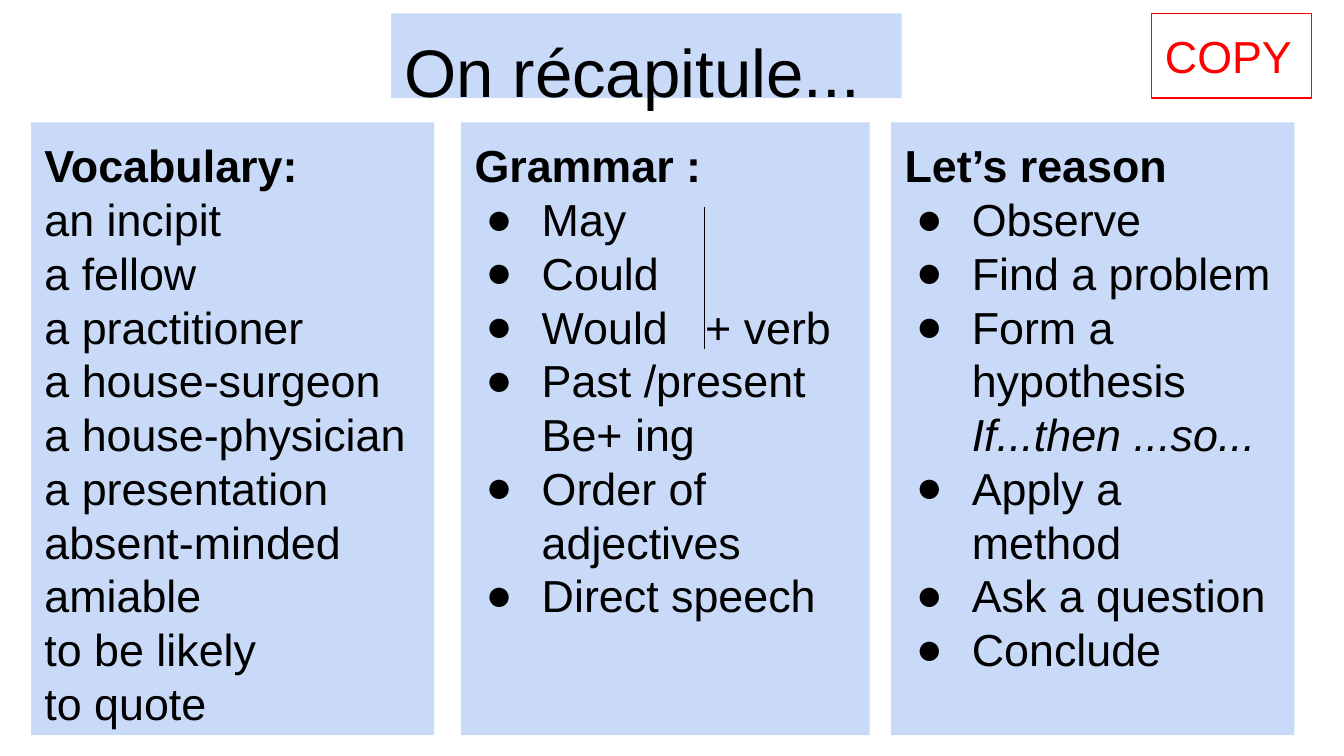
from lxml.etree import SubElement
from pptx import Presentation
from pptx.dml.color import RGBColor
from pptx.enum.shapes import MSO_CONNECTOR, MSO_SHAPE
from pptx.enum.text import MSO_ANCHOR, MSO_AUTO_SIZE, PP_ALIGN
from pptx.oxml.ns import qn
from pptx.util import Pt

# Content: a list item is a tuple (style, *runs)
TITLE = "On récapitule..."
STAMP = "COPY"
VOCABULARY = ["an incipit", "a fellow", "a practitioner", "a house-surgeon",
              "a house-physician", "a presentation", "absent-minded",
              "amiable", "to be likely", "to quote"]
GRAMMAR = [("May",), ("Could",), ("Would", " ", "+ verb"),
           ("Past /present Be+ ing",), ("Order of adjectives",),
           ("Direct speech",)]
REASONING = [("bullet", "Observe"), ("bullet", "Find a problem"),
             ("bullet", "Form a hypothesis"), ("example", "If...then ...so..."),
             ("bullet", "Apply a method"), ("bullet", "Ask a question"),
             ("bullet", "Conclude")]
COLUMNS = [
    ("Vocabulary:", [("plain", word) for word in VOCABULARY]),
    ("Grammar :", [("bullet", *runs) for runs in GRAMMAR]),
    ("Let’s reason", REASONING),
]

# Layout in points
SLIDE = (720, 405)
HEADER_TOP, HEADER_HEIGHT = 7.2, 45.4
COLUMN_LEFT, COLUMN_STEP = 16.6, 230.4
COLUMN_TOP, COLUMN_HEIGHT = 65.5, 328.3
COLUMN_WIDTHS = (216, 218.9, 216)
INSET, INDENT, HANGING = 7.2, 36, -30
TITLE_SIZE, BODY_SIZE = 36, 24
WIDE_GAP = 13.33

PALE_BLUE, BLACK, RED = "C9DAF8", "000000", "FF0000"


def paint(color_format, hex_color):
    color_format.rgb = RGBColor.from_string(hex_color)


def set_box(box, left, top, width, height, size):
    """Place a box and prepare its text frame for top-left text."""
    box.left, box.top, box.width, box.height = map(Pt, (left, top, width, height))
    frame = box.text_frame
    frame.word_wrap = True
    frame.auto_size = MSO_AUTO_SIZE.NONE
    frame.vertical_anchor = MSO_ANCHOR.TOP
    frame.margin_left = frame.margin_right = frame.margin_bottom = Pt(INSET)
    frame.margin_top = Pt(INSET + size * 0.05)
    return frame


def fill_box(box):
    box.fill.solid()
    paint(box.fill.fore_color, PALE_BLUE)


def write(paragraph, runs, size, color=BLACK, style="plain", bold=False):
    paragraph.alignment = PP_ALIGN.LEFT
    paragraph.line_spacing = Pt(size * 1.2)
    paragraph.space_before = paragraph.space_after = Pt(0)
    properties = paragraph._p.get_or_add_pPr()
    properties.set("marL", str(Pt(0 if style == "plain" else INDENT)))
    properties.set("indent", str(Pt(HANGING if style == "bullet" else 0)))
    if style == "bullet":
        bullet_color = SubElement(properties, qn("a:buClr"))
        SubElement(bullet_color, qn("a:srgbClr")).set("val", BLACK)
        SubElement(properties, qn("a:buChar")).set("char", "●")
    else:
        SubElement(properties, qn("a:buNone"))
    for text in runs:
        run = paragraph.add_run()
        run.text = text
        font = run.font
        font.name, font.size = "Arial", Pt(size)
        font.bold, font.italic = bold, style == "example"
        paint(font.color, color)
        if text == " ":  # widen the gap by letter spacing
            run._r.get_or_add_rPr().set("spc", str(round(WIDE_GAP * 100)))


deck = Presentation()
deck.slide_width, deck.slide_height = map(Pt, SLIDE)
slide = deck.slides.add_slide(deck.slide_layouts.get_by_name("Comparison"))
title = slide.shapes.title
*bodies, spare = [holder for holder in slide.placeholders
                  if 1 <= holder.placeholder_format.idx <= 4]
spare._element.getparent().remove(spare._element)

# Three columns
for index, (body, width, (heading, items)) in enumerate(
        zip(bodies, COLUMN_WIDTHS, COLUMNS)):
    frame = set_box(body, COLUMN_LEFT + index * COLUMN_STEP, COLUMN_TOP,
                    width, COLUMN_HEIGHT, BODY_SIZE)
    fill_box(body)
    write(frame.paragraphs[0], [heading], BODY_SIZE, bold=True)
    for style, *runs in items:
        write(frame.add_paragraph(), runs, BODY_SIZE, style=style)

# Title
frame = set_box(title, 209.5, HEADER_TOP, 273.6, HEADER_HEIGHT, TITLE_SIZE)
fill_box(title)
write(frame.paragraphs[0], [TITLE], TITLE_SIZE)

# Red stamp
stamp = slide.shapes.add_shape(MSO_SHAPE.RECTANGLE, 0, 0, 0, 0)
stamp.shadow.inherit = False
frame = set_box(stamp, 617, HEADER_TOP, 85.7, HEADER_HEIGHT, BODY_SIZE)
stamp.fill.background()
paint(stamp.line.color, RED)
stamp.line.width = Pt(0.75)
write(frame.paragraphs[0], [STAMP], BODY_SIZE, color=RED)

# Bar that groups the modal verbs
modal_bar = slide.shapes.add_connector(
    MSO_CONNECTOR.STRAIGHT, Pt(377.3), Pt(110.9), Pt(377.3), Pt(187.2))
paint(modal_bar.line.color, BLACK)
modal_bar.line.width = Pt(0.75)
SubElement(modal_bar._element.spPr, qn("a:effectLst"))

deck.save("out.pptx")
